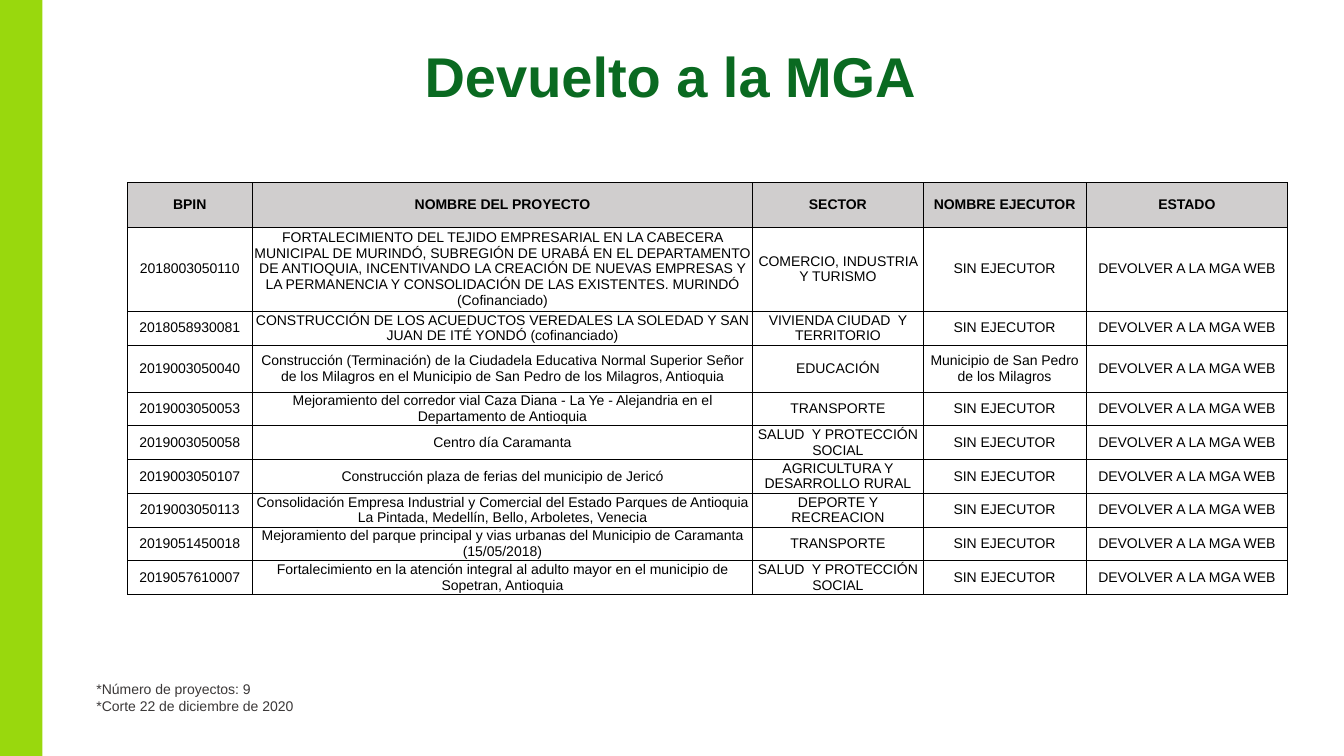
"""Build the slide listing the projects returned to the MGA."""
from dataclasses import astuple, dataclass

import pptx
import pptx.dml.color
import pptx.enum.shapes
import pptx.enum.text
import pptx.oxml
import pptx.oxml.ns
import pptx.slide
import pptx.table
import pptx.text.text
import pptx.util
from pptx.util import Cm

FONT = "Arial"
BLACK, WHITE, GREY = "000000", "FFFFFF", "D0CECE"
LIME, GREEN, CHARCOAL = "99D80D", "0A6A21", "3B3838"
CENTER = pptx.enum.text.PP_ALIGN.CENTER
LEFT = pptx.enum.text.PP_ALIGN.LEFT


@dataclass
class Project:
    bpin: str
    name: str
    sector: str
    executor: str = "SIN EJECUTOR"
    status: str = "DEVOLVER A LA MGA WEB"


@dataclass
class TextBlock:
    left: float
    top: float
    width: float
    height: float
    lines: list[str]
    size: float
    color: str
    bold: bool = False
    align: pptx.enum.text.PP_ALIGN = LEFT


HEADER = Project("BPIN", "NOMBRE DEL PROYECTO", "SECTOR", "NOMBRE EJECUTOR", "ESTADO")
PROJECTS = [
    Project(
        "2018003050110",
        "FORTALECIMIENTO DEL TEJIDO EMPRESARIAL EN LA CABECERA MUNICIPAL DE MURINDÓ, "
        "SUBREGIÓN DE URABÁ EN EL DEPARTAMENTO DE ANTIOQUIA, INCENTIVANDO LA CREACIÓN "
        "DE NUEVAS EMPRESAS Y LA PERMANENCIA Y CONSOLIDACIÓN DE LAS EXISTENTES. "
        "MURINDÓ (Cofinanciado)",
        "COMERCIO, INDUSTRIA Y TURISMO",
    ),
    Project(
        "2018058930081",
        "CONSTRUCCIÓN DE LOS ACUEDUCTOS VEREDALES LA SOLEDAD Y SAN JUAN DE ITÉ YONDÓ "
        "(cofinanciado)",
        "VIVIENDA CIUDAD  Y TERRITORIO",
    ),
    Project(
        "2019003050040",
        "Construcción (Terminación) de la Ciudadela Educativa Normal Superior Señor de "
        "los Milagros en el Municipio de San Pedro de los Milagros, Antioquia",
        "EDUCACIÓN",
        "Municipio de San Pedro de los Milagros",
    ),
    Project(
        "2019003050053",
        "Mejoramiento del corredor vial Caza Diana - La Ye - Alejandria en el "
        "Departamento de Antioquia",
        "TRANSPORTE",
    ),
    Project("2019003050058", "Centro día Caramanta", "SALUD  Y PROTECCIÓN SOCIAL"),
    Project(
        "2019003050107",
        "Construcción plaza de ferias del municipio de Jericó",
        "AGRICULTURA Y DESARROLLO RURAL",
    ),
    Project(
        "2019003050113",
        "Consolidación Empresa Industrial y Comercial del Estado Parques de Antioquia "
        "La Pintada, Medellín, Bello, Arboletes, Venecia",
        "DEPORTE Y RECREACION",
    ),
    Project(
        "2019051450018",
        "Mejoramiento del parque principal y vias urbanas del Municipio de Caramanta "
        "(15/05/2018)",
        "TRANSPORTE",
    ),
    Project(
        "2019057610007",
        "Fortalecimiento en la atención integral al adulto mayor en el municipio de "
        "Sopetran, Antioquia",
        "SALUD  Y PROTECCIÓN SOCIAL",
    ),
]
COLUMN_WIDTHS = [3.14, 12.62, 4.29, 4.11, 5.08]
ROW_HEIGHTS = [1.12, 1.98, 0.79, 1.19] + [0.79] * 6
TEXT_BLOCKS = [
    TextBlock(3.2, 0.91, 27.38, 1.96, ["Devuelto a la MGA"], 40, GREEN, True, CENTER),
    TextBlock(
        2.18, 17.02, 9.04, 1.12,
        ["*Número de proyectos: 9", "*Corte 22 de diciembre de 2020"], 10, CHARCOAL,
    ),
]


def rgb(color: str) -> pptx.dml.color.RGBColor:
    return pptx.dml.color.RGBColor.from_string(color)


def style_paragraph(
    para: pptx.text.text._Paragraph, size: float, color: str, bold: bool,
    align: pptx.enum.text.PP_ALIGN,
) -> None:
    para.alignment = align
    para.font.name = FONT
    para.font.size = pptx.util.Pt(size)
    para.font.bold = bold
    para.font.color.rgb = rgb(color)


def add_text(page: pptx.slide.Slide, block: TextBlock) -> None:
    box = page.shapes.add_textbox(
        Cm(block.left), Cm(block.top), Cm(block.width), Cm(block.height)
    )
    box.text_frame.word_wrap = True
    box.text_frame.text = "\n".join(block.lines)
    for para in box.text_frame.paragraphs:
        style_paragraph(para, block.size, block.color, block.bold, block.align)


def add_side_band(page: pptx.slide.Slide, height: int) -> None:
    band = page.shapes.add_shape(
        pptx.enum.shapes.MSO_SHAPE.RECTANGLE, 0, 0, Cm(1.07), height
    )
    band.shadow.inherit = False
    band.fill.solid()
    band.fill.fore_color.rgb = rgb(LIME)
    band.line.fill.background()


def add_borders(cell: pptx.table._Cell) -> None:
    properties = cell._tc.get_or_add_tcPr()
    for side in ("lnL", "lnR", "lnT", "lnB"):
        properties.append(pptx.oxml.parse_xml(
            f'<a:{side} {pptx.oxml.ns.nsdecls("a")} w="6350"><a:solidFill>'
            f'<a:srgbClr val="{BLACK}"/></a:solidFill></a:{side}>'
        ))


def fill_cell(cell: pptx.table._Cell, text: str, is_header: bool) -> None:
    cell.text = text
    cell.margin_left = cell.margin_right = cell.margin_top = cell.margin_bottom = 0
    cell.vertical_anchor = pptx.enum.text.MSO_ANCHOR.MIDDLE
    add_borders(cell)
    cell.fill.solid()
    cell.fill.fore_color.rgb = rgb(GREY if is_header else WHITE)
    style_paragraph(cell.text_frame.paragraphs[0], 10, BLACK, is_header, CENTER)


def add_project_table(page: pptx.slide.Slide) -> None:
    table = page.shapes.add_table(
        len(ROW_HEIGHTS), len(COLUMN_WIDTHS), Cm(3.21), Cm(4.6),
        Cm(sum(COLUMN_WIDTHS)), Cm(sum(ROW_HEIGHTS)),
    ).table
    table.horz_banding = False
    for column, width in zip(table.columns, COLUMN_WIDTHS):
        column.width = Cm(width)
    for row, height, project in zip(table.rows, ROW_HEIGHTS, [HEADER, *PROJECTS]):
        row.height = Cm(height)
        for cell, text in zip(row.cells, astuple(project)):
            fill_cell(cell, text, project is HEADER)


def main() -> None:
    deck = pptx.Presentation()
    deck.slide_width, deck.slide_height = Cm(33.87), Cm(19.05)
    page = deck.slides.add_slide(deck.slide_layouts[6])
    add_side_band(page, deck.slide_height)
    for block in TEXT_BLOCKS:
        add_text(page, block)
    add_project_table(page)
    deck.save("out.pptx")


if __name__ == "__main__":
    main()
